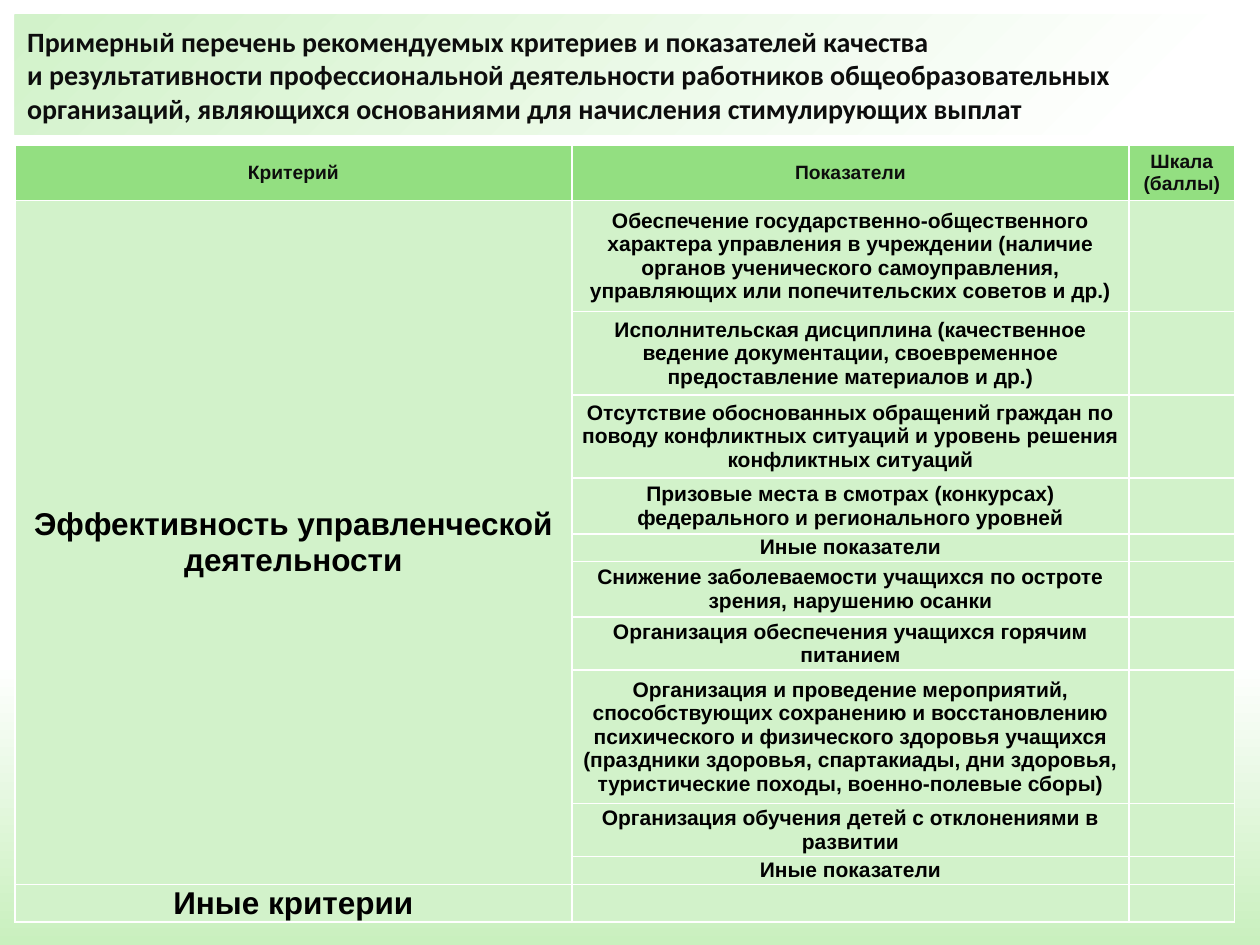
import pptx
import pptx.dml.color
import pptx.enum.shapes
import pptx.enum.text
import pptx.oxml
import pptx.oxml.ns
import pptx.util
from pptx.util import Cm

TITLE = (
    "Примерный перечень рекомендуемых критериев и показателей качества\n"
    "и результативности профессиональной деятельности работников общеобразовательных "
    "организаций, являющихся основаниями для начисления стимулирующих выплат"
)
HEADINGS = ["Критерий", "Показатели", "Шкала (баллы)"]
CRITERION = "Эффективность управленческой деятельности"
OTHER_CRITERIA = "Иные критерии"
INDICATORS = [
    ("Обеспечение государственно-общественного характера управления в учреждении "
     "(наличие органов ученического самоуправления, управляющих или попечительских "
     "советов и др.)", 2.24),
    ("Исполнительская дисциплина (качественное ведение документации, своевременное "
     "предоставление материалов и др.)", 1.68),
    ("Отсутствие обоснованных обращений граждан по поводу конфликтных ситуаций и "
     "уровень решения конфликтных ситуаций", 1.68),
    ("Призовые места в смотрах (конкурсах) федерального и регионального уровней", 1.12),
    ("Иные показатели", 0.56),
    ("Снижение заболеваемости учащихся по остроте зрения, нарушению осанки", 1.12),
    ("Организация обеспечения учащихся горячим питанием", 1.07),
    ("Организация и проведение мероприятий, способствующих сохранению и восстановлению "
     "психического и физического здоровья учащихся (праздники здоровья, спартакиады, "
     "дни здоровья, туристические походы, военно-полевые сборы)", 2.69),
    ("Организация обучения детей с отклонениями в развитии", 1.07),
    ("Иные показатели", 0.56),
]
COLUMN_WIDTHS = [11.23, 11.23, 2.13]
HEADER_HEIGHT, LAST_HEIGHT = 1.12, 0.76
HEADER_FILL, BODY_FILL = "93DF81", "D2F2CA"
LEFT = Cm(0.3)


def color(value):
    """Return the RGB colour for a hex string."""
    return pptx.dml.color.RGBColor.from_string(value)


def set_gradient(fill, owner, stops, direction):
    """Give the fill inside owner the listed stops and direction."""
    fill.gradient()
    gradient = next(owner.iter(pptx.oxml.ns.qn("a:gradFill")))
    for child in list(gradient):
        gradient.remove(child)
    namespace = pptx.oxml.ns.nsdecls("a")
    stop_list = "".join(
        f'<a:gs pos="{position * 1000}"><a:srgbClr val="{value}"/></a:gs>'
        for position, value in stops
    )
    gradient.append(pptx.oxml.parse_xml(f"<a:gsLst {namespace}>{stop_list}</a:gsLst>"))
    gradient.append(pptx.oxml.parse_xml(direction.format(namespace)))


def set_text(paragraph, text, size, font_name, text_color):
    """Write bold text into a paragraph."""
    paragraph.text = text
    for run in paragraph.runs:
        run.font.size = pptx.util.Pt(size)
        run.font.name = font_name
        run.font.bold = True
        run.font.color.rgb = color(text_color)


def add_title(slide):
    """Add the title band with its gradient."""
    shape = slide.shapes.add_shape(
        pptx.enum.shapes.MSO_SHAPE.RECTANGLE, LEFT, LEFT, Cm(24.41), Cm(2.41))
    shape.shadow.inherit = False
    shape.line.fill.background()
    set_gradient(
        shape.fill, shape.element, [(0, BODY_FILL), (93, "FFFFFF"), (94, "FFFFFF")],
        '<a:path {} path="circle"><a:fillToRect r="100000" b="100000"/></a:path>')
    text_frame = shape.text_frame
    text_frame.word_wrap = True
    text_frame.vertical_anchor = pptx.enum.text.MSO_ANCHOR.MIDDLE
    paragraph = text_frame.paragraphs[0]
    set_text(paragraph, TITLE, 16, "Calibri", "0D0D0D")
    paragraph.alignment = pptx.enum.text.PP_ALIGN.LEFT


def style_cell(cell, fill):
    """Set the borders, margins, anchor and fill of a cell."""
    properties = cell._tc.get_or_add_tcPr()
    for side in ("lnL", "lnR", "lnT", "lnB"):
        properties.append(pptx.oxml.parse_xml(
            f'<a:{side} {pptx.oxml.ns.nsdecls("a")} w="12700"><a:solidFill>'
            f'<a:srgbClr val="FFFFFF"/></a:solidFill></a:{side}>'))
    cell.fill.solid()
    cell.fill.fore_color.rgb = color(fill)
    cell.margin_left = cell.margin_right = Cm(0.15)
    cell.margin_top = cell.margin_bottom = 0
    cell.vertical_anchor = pptx.enum.text.MSO_ANCHOR.MIDDLE


def fill_cell(cell, text, size, text_color):
    """Write centred text, or keep an empty cell low."""
    paragraph = cell.text_frame.paragraphs[0]
    paragraph.alignment = pptx.enum.text.PP_ALIGN.CENTER
    if text:
        set_text(paragraph, text, size, "Arial", text_color)
    else:
        paragraph._p.get_or_add_endParaRPr().set("sz", "1000")


def add_criteria_table(slide):
    """Add the table of criteria and indicators."""
    rows = [HEADINGS] + [["", text, ""] for text, _ in INDICATORS]
    rows.append([OTHER_CRITERIA, "", ""])
    rows[1][0] = CRITERION
    heights = [HEADER_HEIGHT] + [height for _, height in INDICATORS] + [LAST_HEIGHT]
    table = slide.shapes.add_table(
        len(rows), len(HEADINGS), LEFT, Cm(2.92),
        Cm(sum(COLUMN_WIDTHS)), Cm(sum(heights))).table
    for column, width in zip(table.columns, COLUMN_WIDTHS):
        column.width = Cm(width)
    for row_index, (texts, height) in enumerate(zip(rows, heights)):
        table.rows[row_index].height = Cm(height)
        is_header = row_index == 0
        for column_index, text in enumerate(texts):
            cell = table.cell(row_index, column_index)
            style_cell(cell, HEADER_FILL if is_header else BODY_FILL)
            size = 11 if is_header else 18 if column_index == 0 else 12
            fill_cell(cell, text, size, "0D0D0D" if is_header else "000000")
    table.cell(1, 0).merge(table.cell(len(INDICATORS), 0))


def main():
    """Build and save the slide."""
    presentation = pptx.Presentation()
    presentation.slide_width = Cm(25.4)
    presentation.slide_height = Cm(19.05)
    slide = presentation.slides.add_slide(presentation.slide_layouts[6])
    set_gradient(
        slide.background.fill, slide.element,
        [(0, "C9F0BE"), (30, "FFFFFF"), (70, "FFFFFF")],
        '<a:lin {} ang="16200000" scaled="0"/>')
    add_title(slide)
    add_criteria_table(slide)
    presentation.save("out.pptx")


if __name__ == "__main__":
    main()
